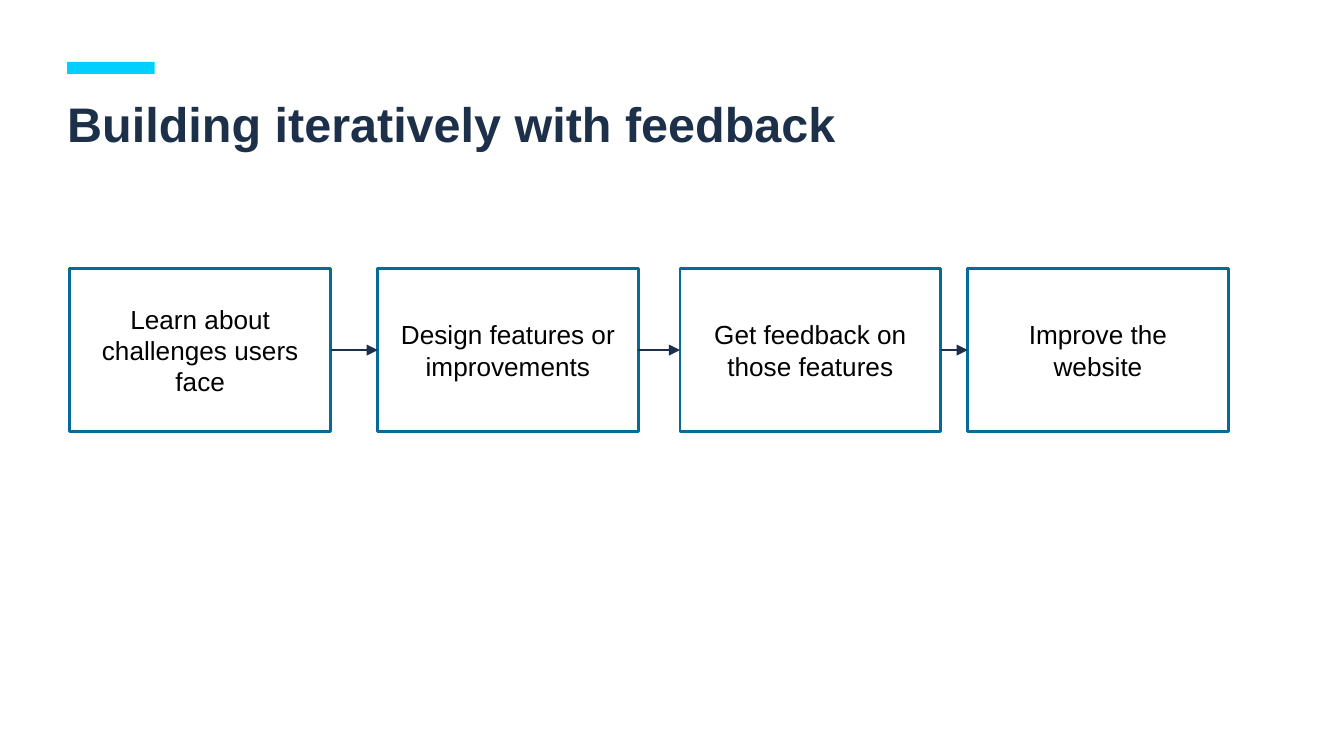
from itertools import pairwise
from typing import NamedTuple

from lxml import etree
from pptx import Presentation
from pptx.dml.color import RGBColor
from pptx.enum import shapes, text
from pptx.oxml import ns
from pptx.util import Inches, Pt

CYAN = RGBColor(0x00, 0xCF, 0xFF)
NAVY = RGBColor(0x1C, 0x30, 0x4A)
BLUE = RGBColor(0x04, 0x6B, 0x99)
WHITE = RGBColor(0xFF, 0xFF, 0xFF)
BLACK = RGBColor(0x00, 0x00, 0x00)

SLIDE_WIDTH = Inches(10)
SLIDE_HEIGHT = SLIDE_WIDTH * 9 // 16
STEP_TOP, STEP_WIDTH, STEP_HEIGHT = 2, 1.94, 1.21
RIGHT_SITE, LEFT_SITE = 3, 1


class Step(NamedTuple):
    left: float
    label: str


STEPS = [
    Step(0.52, "Learn about challenges users face"),
    Step(2.81, "Design features or improvements"),
    Step(5.06, "Get feedback on those features"),
    Step(7.2, "Improve the website"),
]


def set_all(target, values: dict) -> None:
    for name, value in values.items():
        setattr(target, name, value)


def write(shape, words: str, frame_format: dict, para_format: dict,
          font_format: dict, color: RGBColor, inset: float) -> None:
    frame = shape.text_frame
    margins = dict.fromkeys(
        ("margin_left", "margin_top", "margin_right", "margin_bottom"), Inches(inset))
    set_all(frame, {"word_wrap": True} | margins | frame_format)
    para = frame.paragraphs[0]
    set_all(para, para_format)
    span = para.add_run()
    span.text = words
    set_all(span.font, {"name": "Arial"} | font_format)
    span.font.color.rgb = color


def add_rectangle(page, left: float, top: float, width: float, height: float,
                  fill: RGBColor):
    box = page.shapes.add_shape(shapes.MSO_SHAPE.RECTANGLE, Inches(left), Inches(top),
                                Inches(width), Inches(height))
    box.shadow.inherit = False
    box.fill.solid()
    box.fill.fore_color.rgb = fill
    box.line.fill.background()
    return box


def add_step(page, step: Step):
    box = add_rectangle(page, step.left, STEP_TOP, STEP_WIDTH, STEP_HEIGHT, WHITE)
    box.line.color.rgb = BLUE
    box.line.width = Pt(1.5)
    write(box, step.label, {"vertical_anchor": text.MSO_ANCHOR.MIDDLE},
          {"alignment": text.PP_ALIGN.CENTER}, {"size": Pt(14)}, BLACK, 0.1)
    return box


def add_arrow(page, source, target) -> None:
    arrow = page.shapes.add_connector(shapes.MSO_CONNECTOR.STRAIGHT, 0, 0, 0, 0)
    arrow.begin_connect(source, RIGHT_SITE)
    arrow.end_connect(target, LEFT_SITE)
    arrow.line.color.rgb = NAVY
    arrow.line.width = Pt(0.75)
    etree.SubElement(arrow.line._get_or_add_ln(), ns.qn("a:tailEnd"), type="triangle")
    etree.SubElement(arrow._element.spPr, ns.qn("a:effectLst"))


def main() -> None:
    deck = Presentation()
    set_all(deck, {"slide_width": SLIDE_WIDTH, "slide_height": SLIDE_HEIGHT})
    page = deck.slides.add_slide(deck.slide_layouts[6])

    add_rectangle(page, 0.5, 0.46, 0.65, 0.09, CYAN)
    title = page.shapes.add_textbox(Inches(0.5), Inches(0.7), Inches(8.08), Inches(0.92))
    write(title, "Building iteratively with feedback", {}, {},
          {"size": Pt(26), "bold": True}, NAVY, 0)

    boxes = [add_step(page, step) for step in STEPS]
    for source, target in pairwise(boxes):
        add_arrow(page, source, target)

    deck.save("out.pptx")


if __name__ == "__main__":
    main()
